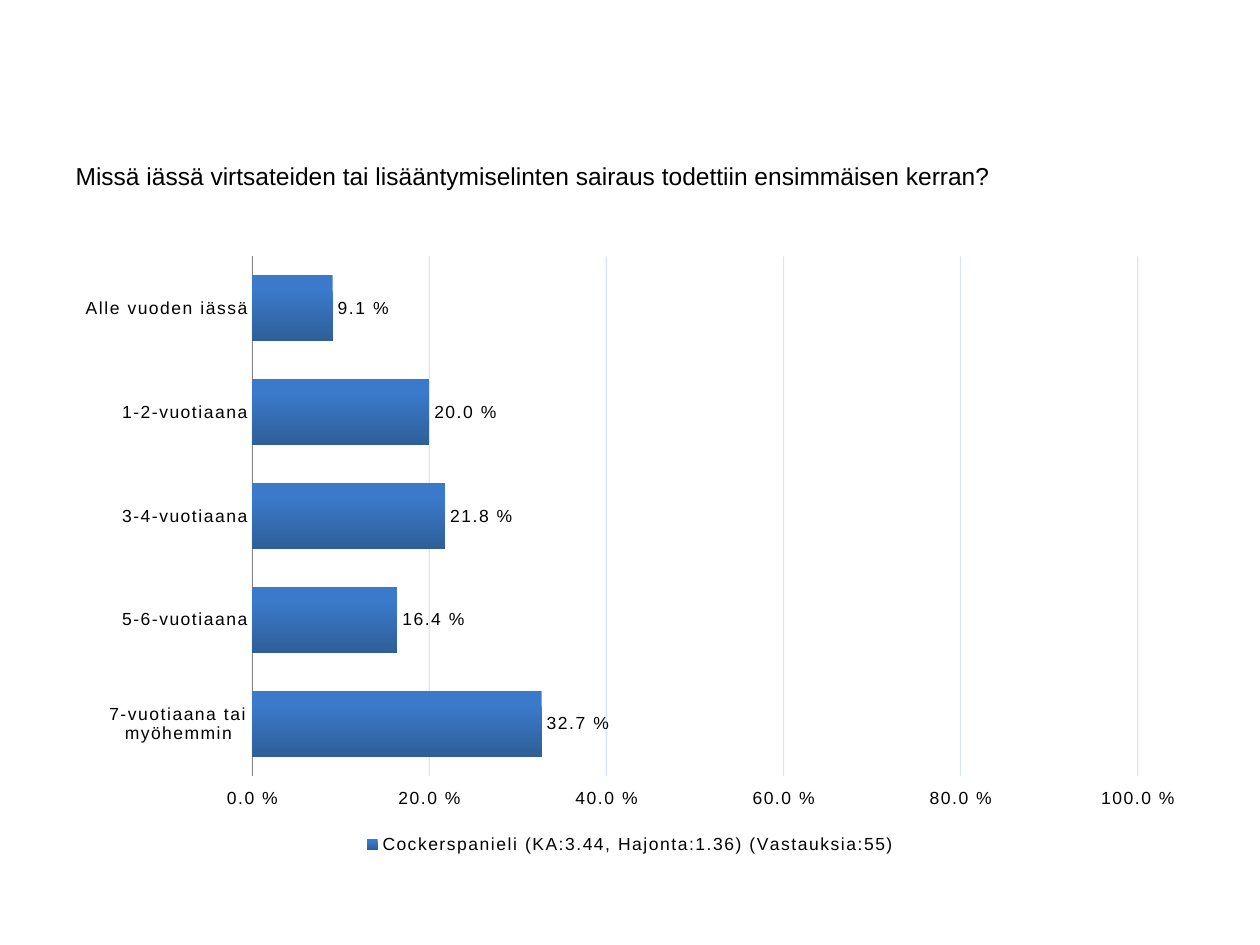
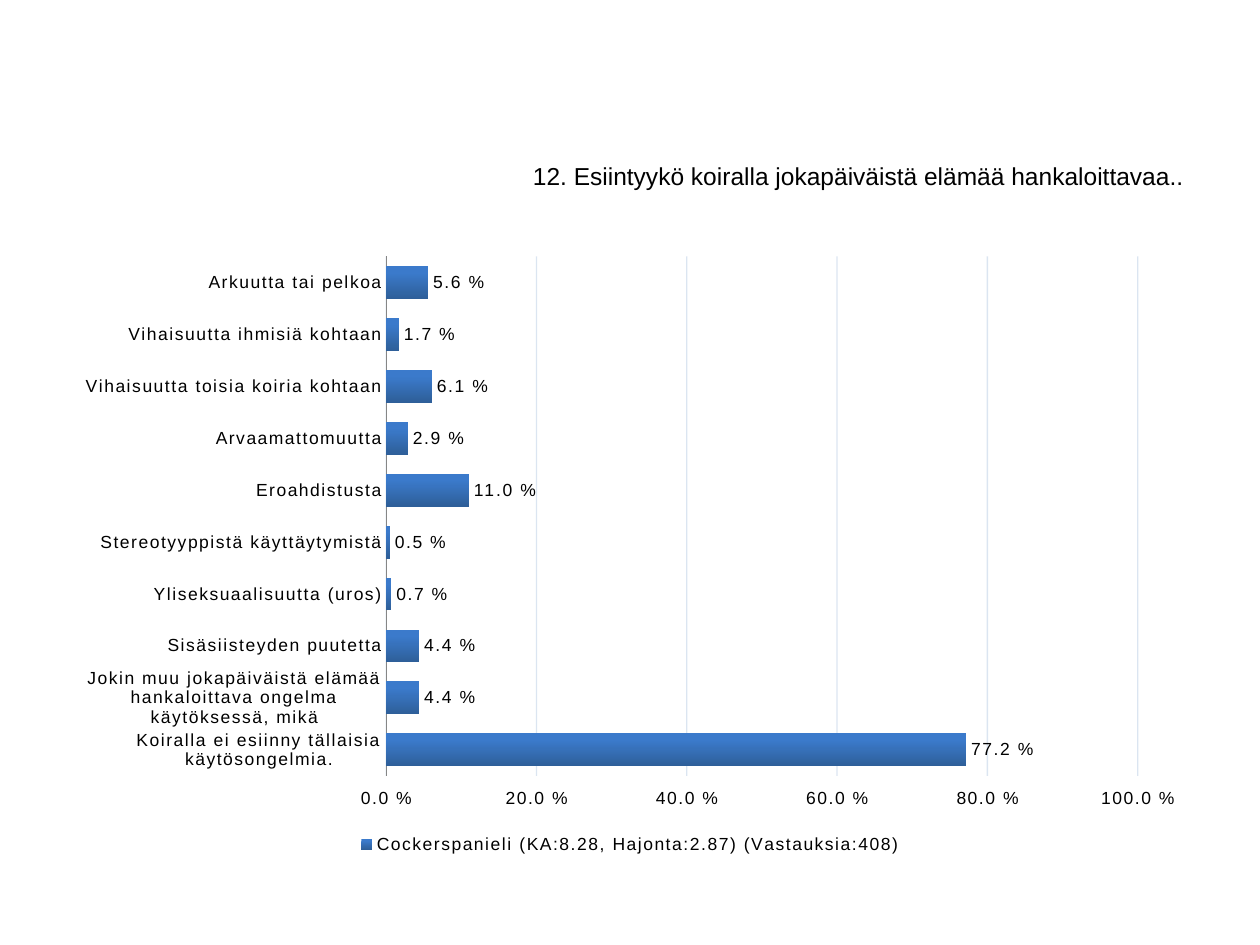
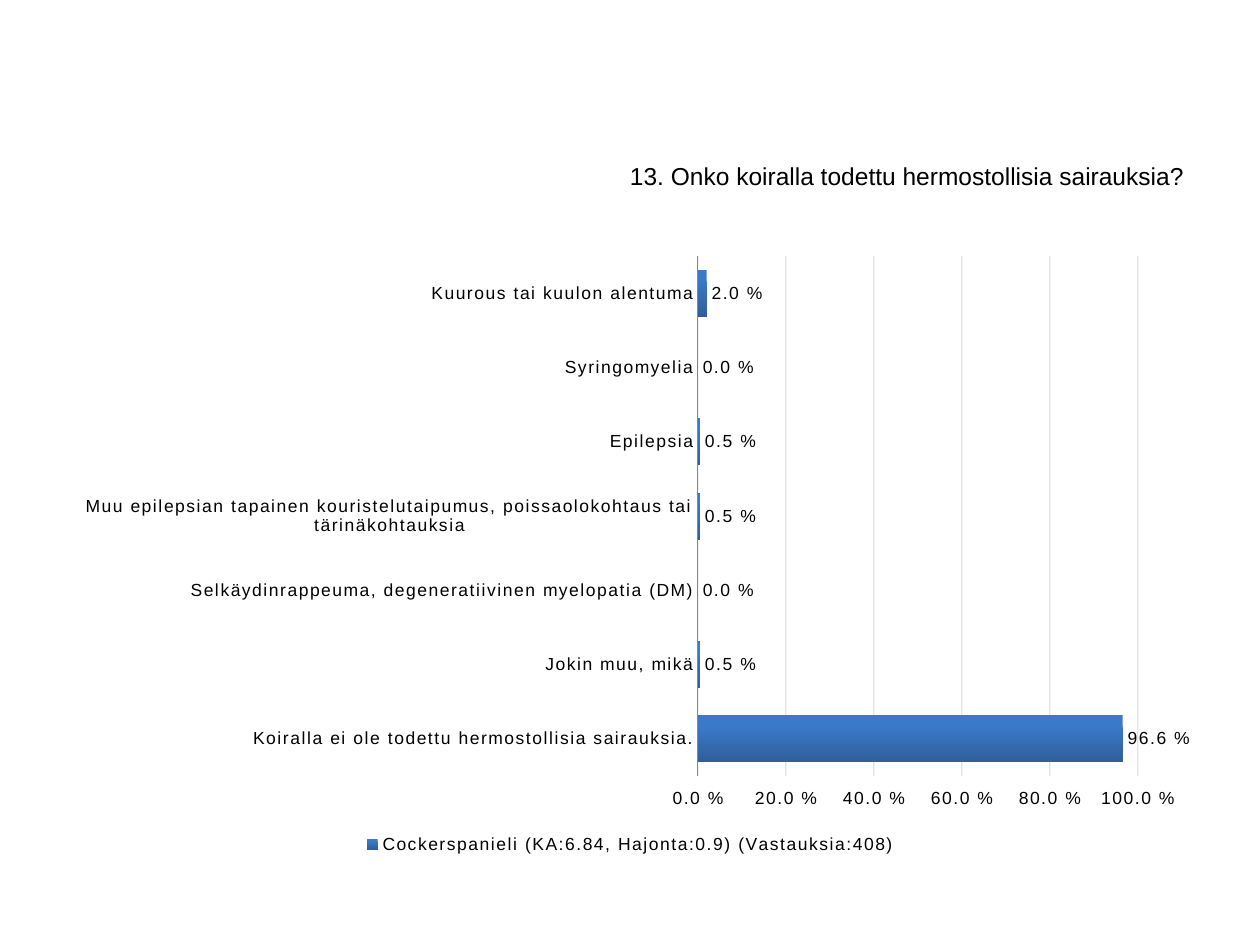
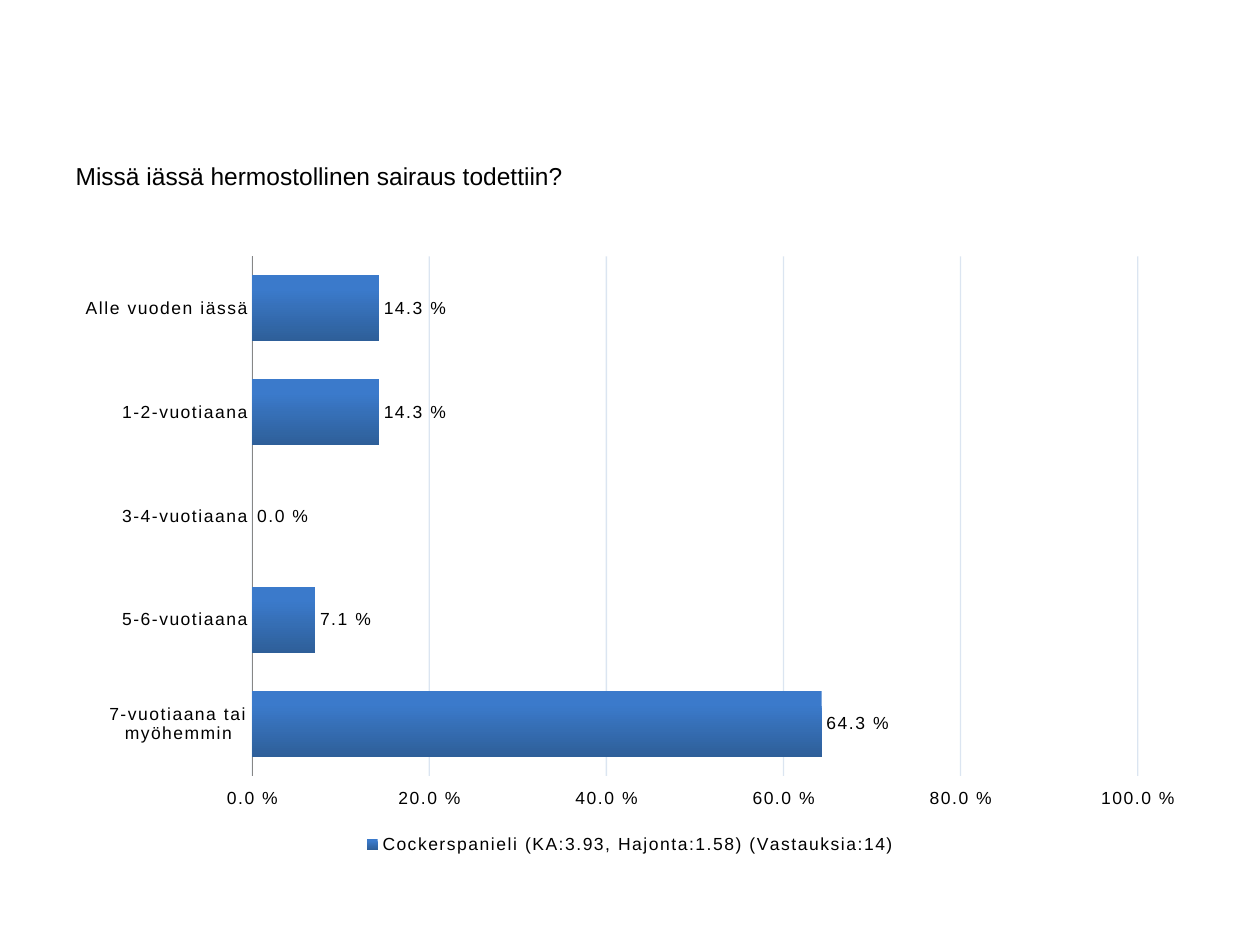
import pptx
import pptx.chart.data
import pptx.dml.color
import pptx.enum.chart
import pptx.enum.text
import pptx.oxml
import pptx.oxml.ns
import pptx.util
import lxml.etree

Pt = pptx.util.Pt
RGBColor = pptx.dml.color.RGBColor
ALIGN = pptx.enum.text.PP_ALIGN

AGES = [
    "Alle vuoden iässä", "1-2-vuotiaana", "3-4-vuotiaana", "5-6-vuotiaana",
    "7-vuotiaana tai myöhemmin",
]

SURVEY = [
    {
        "question": "Missä iässä virtsateiden tai lisääntymiselinten sairaus todettiin ensimmäisen kerran?",
        "alignment": ALIGN.LEFT,
        "series": "Cockerspanieli (KA:3.44, Hajonta:1.36) (Vastauksia:55)",
        "answers": list(zip(AGES, (0.091, 0.2, 0.218, 0.164, 0.327))),
    },
    {
        "question": "12. Esiintyykö koiralla jokapäiväistä elämää hankaloittavaa..",
        "alignment": ALIGN.RIGHT,
        "series": "Cockerspanieli (KA:8.28, Hajonta:2.87) (Vastauksia:408)",
        "answers": [
            ("Arkuutta tai pelkoa", 0.056),
            ("Vihaisuutta ihmisiä kohtaan", 0.017),
            ("Vihaisuutta toisia koiria kohtaan", 0.061),
            ("Arvaamattomuutta", 0.029),
            ("Eroahdistusta", 0.11),
            ("Stereotyyppistä käyttäytymistä", 0.005),
            ("Yliseksuaalisuutta (uros)", 0.007),
            ("Sisäsiisteyden puutetta", 0.044),
            ("Jokin muu jokapäiväistä elämää hankaloittava ongelma käytöksessä, mikä", 0.044),
            ("Koiralla ei esiinny tällaisia käytösongelmia.", 0.772),
        ],
    },
    {
        "question": "13. Onko koiralla todettu hermostollisia sairauksia?",
        "alignment": ALIGN.RIGHT,
        "series": "Cockerspanieli (KA:6.84, Hajonta:0.9) (Vastauksia:408)",
        "answers": [
            ("Kuurous tai kuulon alentuma", 0.02),
            ("Syringomyelia", 0),
            ("Epilepsia", 0.005),
            ("Muu epilepsian tapainen kouristelutaipumus, poissaolokohtaus tai tärinäkohtauksia", 0.005),
            ("Selkäydinrappeuma, degeneratiivinen myelopatia (DM)", 0),
            ("Jokin muu, mikä", 0.005),
            ("Koiralla ei ole todettu hermostollisia sairauksia.", 0.966),
        ],
    },
    {
        "question": "Missä iässä hermostollinen sairaus todettiin?",
        "alignment": ALIGN.LEFT,
        "series": "Cockerspanieli (KA:3.93, Hajonta:1.58) (Vastauksia:14)",
        "answers": list(zip(AGES, (0.143, 0.143, 0, 0.071, 0.643))),
    },
]

BLACK = RGBColor(0x00, 0x00, 0x00)
GRID_BLUE = RGBColor(0x4F, 0x81, 0xBD)
AXIS_GREY = RGBColor(0x86, 0x86, 0x86)
BAR_LIGHT = RGBColor(0x3B, 0x7A, 0xCB)
BAR_DARK = RGBColor(0x2E, 0x5F, 0x99)

SLIDE_WIDTH, SLIDE_HEIGHT = Pt(720), Pt(540)
MARGIN = Pt(36)
CONTENT_WIDTH = SLIDE_WIDTH - 2 * MARGIN
TITLE_TOP, TITLE_HEIGHT = Pt(88.5), Pt(42.5)
CHART_TOP, CHART_HEIGHT = Pt(139.5), Pt(351.5)
PERCENT = "0.0\\ %"
LETTER_SPACING = "100"

TITLE_BOX = {"left": MARGIN, "top": TITLE_TOP, "width": CONTENT_WIDTH, "height": TITLE_HEIGHT}
TITLE_FRAME = {
    "word_wrap": True,
    "auto_size": pptx.enum.text.MSO_AUTO_SIZE.NONE,
    "vertical_anchor": pptx.enum.text.MSO_ANCHOR.TOP,
}
TITLE_FONT = {"name": "Arial", "size": Pt(14), "bold": False}
CHART_FONT = {"name": "Calibri", "size": Pt(10)}
LABEL_FONT = {"name": "Arial", "size": Pt(10)}
NO_TICKS = {
    "major_tick_mark": pptx.enum.chart.XL_TICK_MARK.NONE,
    "minor_tick_mark": pptx.enum.chart.XL_TICK_MARK.NONE,
}
CATEGORY_AXIS = {
    **NO_TICKS,
    "reverse_order": True,
    "has_major_gridlines": False,
}
VALUE_AXIS = {
    **NO_TICKS,
    "minimum_scale": 0,
    "maximum_scale": 1,
    "major_unit": 0.2,
    "has_major_gridlines": True,
    "tick_label_position": pptx.enum.chart.XL_TICK_LABEL_POSITION.HIGH,
}
NUMBER_FORMAT = {"number_format": PERCENT, "number_format_is_linked": False}
DATA_LABELS = {
    **NUMBER_FORMAT,
    "show_value": True,
    "position": pptx.enum.chart.XL_LABEL_POSITION.OUTSIDE_END,
}
LEGEND = {"position": pptx.enum.chart.XL_LEGEND_POSITION.BOTTOM, "include_in_layout": False}


def apply(target, values):
    for name, value in values.items():
        setattr(target, name, value)


def format_font(font, values):
    apply(font, values)
    font.color.rgb = BLACK


def add_question(slide, question, alignment):
    title = slide.shapes.title
    apply(title, TITLE_BOX)
    apply(title.text_frame, TITLE_FRAME)
    paragraph = title.text_frame.paragraphs[0]
    paragraph.text = question
    apply(paragraph, {"alignment": alignment, "space_before": Pt(2.8)})
    format_font(paragraph.runs[0].font, TITLE_FONT)


def format_axes(chart):
    category_axis, value_axis = chart.category_axis, chart.value_axis
    apply(category_axis, CATEGORY_AXIS)
    category_axis.format.line.width = Pt(0.75)
    category_axis.format.line.color.rgb = AXIS_GREY
    apply(value_axis, VALUE_AXIS)
    apply(value_axis.tick_labels, NUMBER_FORMAT)
    value_axis.format.line.fill.background()
    grid_line = value_axis.major_gridlines.format.line
    grid_line.width = Pt(0.75)
    grid_line.color.rgb = GRID_BLUE
    gridlines = chart.element.find(".//" + pptx.oxml.ns.qn("c:majorGridlines"))
    grid_color = gridlines.find(".//" + pptx.oxml.ns.qn("a:srgbClr"))
    lxml.etree.SubElement(grid_color, pptx.oxml.ns.qn("a:alpha"), val="20000")


def format_bars(plot):
    apply(plot, {"gap_width": 58, "vary_by_categories": False, "has_data_labels": True})
    apply(plot.data_labels, DATA_LABELS)
    fill = plot.series[0].format.fill
    fill.gradient()
    fill.gradient_angle = 270
    for stop, color, position in zip(fill.gradient_stops, (BAR_LIGHT, BAR_DARK), (0.2, 1)):
        stop.color.rgb = color
        stop.position = position


def add_answers(slide, series_name, answers):
    categories, shares = zip(*answers)
    data = pptx.chart.data.CategoryChartData(number_format=PERCENT)
    data.categories = categories
    data.add_series(series_name, shares)
    chart = slide.shapes.add_chart(
        pptx.enum.chart.XL_CHART_TYPE.BAR_CLUSTERED,
        MARGIN, CHART_TOP, CONTENT_WIDTH, CHART_HEIGHT, data,
    ).chart
    apply(chart, {"has_title": False, "has_legend": True})
    apply(chart.legend, LEGEND)
    format_axes(chart)
    plot = chart.plots[0]
    format_bars(plot)
    format_font(chart.font, CHART_FONT)
    for part in (chart.category_axis.tick_labels, chart.value_axis.tick_labels,
                 chart.legend, plot.data_labels):
        format_font(part.font, LABEL_FONT)
    for properties in chart.element.iter(pptx.oxml.ns.qn("a:defRPr")):
        properties.set("spc", LETTER_SPACING)


def main():
    presentation = pptx.Presentation()
    apply(presentation, {"slide_width": SLIDE_WIDTH, "slide_height": SLIDE_HEIGHT})
    for entry in SURVEY:
        slide = presentation.slides.add_slide(presentation.slide_layouts[5])
        add_question(slide, entry["question"], entry["alignment"])
        add_answers(slide, entry["series"], entry["answers"])
    presentation.save("out.pptx")


if __name__ == "__main__":
    main()
